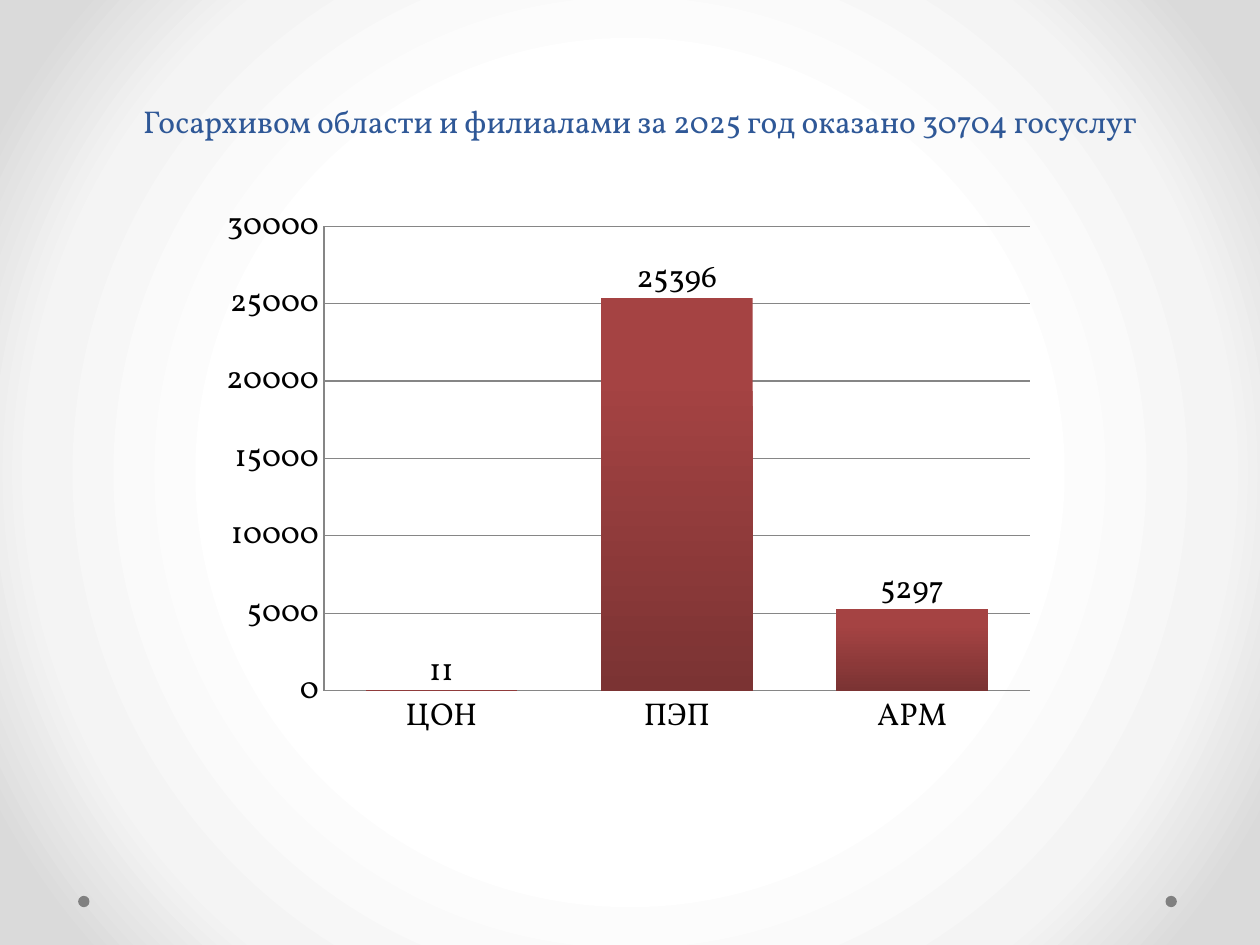
from pptx import Presentation
from pptx.chart.data import CategoryChartData
from pptx.dml.color import RGBColor
from pptx.enum.chart import XL_CHART_TYPE as ChartType
from pptx.enum.chart import XL_LABEL_POSITION as LabelPosition
from pptx.enum.chart import XL_TICK_MARK as TickMark
from pptx.enum.shapes import MSO_SHAPE as Shape
from pptx.enum.text import MSO_ANCHOR as Anchor
from pptx.enum.text import PP_ALIGN as Align
from pptx.oxml import parse_xml
from pptx.oxml.ns import nsdecls
from pptx.util import Inches, Pt

FONT = "Vollkorn"
COLORS = {
    "title": "2F5897", "dot": "808080", "grid": "868686", "text": "000000",
    "bar_top": "A54343", "bar_bottom": "7B3333",
}
BACKGROUND_STOPS = [(50, "FFFFFF"), (76, "F4F4F4"), (92, "DADADA")]
SERVICES = {"ЦОН": 11, "ПЭП": 25396, "АРМ": 5297}


def color(name):
    return RGBColor.from_string(COLORS[name])


def format_font(font, size=18, fill="text"):
    font.name = FONT
    font.size = Pt(size)
    font.bold = False
    font.color.rgb = color(fill)


def set_background(page):
    stops = "".join(
        f'<a:gs pos="{position * 1000}"><a:srgbClr val="{value}"/></a:gs>'
        for position, value in BACKGROUND_STOPS
    )
    page.element.cSld.insert(0, parse_xml(
        f'<p:bg {nsdecls("p", "a")}><p:bgPr><a:gradFill><a:gsLst>{stops}</a:gsLst>'
        '<a:path path="circle"><a:fillToRect l="50000" t="50000" r="50000" b="50000"/>'
        '</a:path></a:gradFill><a:effectLst/></p:bgPr></p:bg>'
    ))


def add_dot(page, left, top, size=0.09):
    dot = page.shapes.add_shape(
        Shape.OVAL, Inches(left), Inches(top), Inches(size), Inches(size))
    dot.shadow.inherit = False
    dot.fill.solid()
    dot.fill.fore_color.rgb = color("dot")
    dot.line.fill.background()


def add_text(page, text, left, top, width, height, **style):
    box = page.shapes.add_textbox(
        Inches(left), Inches(top), Inches(width), Inches(height))
    frame = box.text_frame
    frame.word_wrap = True
    frame.vertical_anchor = Anchor.BOTTOM
    para = frame.paragraphs[0]
    para.alignment = Align.CENTER
    span = para.add_run()
    span.text = text
    format_font(span.font, **style)


def manual_layout(content):
    return parse_xml(
        f'<c:layout {nsdecls("c")}><c:manualLayout>{content}</c:manualLayout></c:layout>')


def place_plot(chart, x, y, w, h):
    area = chart.plots[0]._element.getparent()
    for old in area.findall("{*}layout"):
        area.remove(old)
    sizes = "".join(
        f'<c:{key} val="{value}"/>' for key, value in zip("xywh", (x, y, w, h)))
    area.insert(0, manual_layout(
        '<c:layoutTarget val="inner"/><c:xMode val="edge"/><c:yMode val="edge"/>' + sizes))


def raise_label(point, shift):
    label = point.data_label
    label.position = LabelPosition.INSIDE_END
    label._dLbl.insert(1, manual_layout(f'<c:x val="0"/><c:y val="{-shift}"/>'))


def style_axis(axis):
    axis.major_tick_mark = axis.minor_tick_mark = TickMark.NONE
    axis.format.line.color.rgb = color("grid")
    axis.format.line.width = Pt(0.75)


def style_bars(series):
    fill = series.format.fill
    fill.gradient()
    fill.gradient_angle = 270
    for stop, name, position in zip(
            fill.gradient_stops, ("bar_top", "bar_bottom"), (0.2, 1)):
        stop.color.rgb = color(name)
        stop.position = position


def add_services_chart(page, left, top, width, height):
    data = CategoryChartData()
    data.categories = list(SERVICES)
    data.add_series("Series 1", list(SERVICES.values()))
    chart = page.shapes.add_chart(
        ChartType.COLUMN_STACKED, Inches(left), Inches(top),
        Inches(width), Inches(height), data).chart
    chart.has_legend = chart.has_title = False
    format_font(chart.font)
    place_plot(chart, 0.135, 0.06, 0.84, 0.83)
    style_axis(chart.category_axis)
    values = chart.value_axis
    style_axis(values)
    values.minimum_scale, values.maximum_scale, values.major_unit = 0, 30000, 5000
    values.has_major_gridlines = True
    values.major_gridlines.format.line.color.rgb = color("grid")
    values.major_gridlines.format.line.width = Pt(0.75)
    plot = chart.plots[0]
    plot.gap_width, plot.overlap, plot.vary_by_categories = 55, 100, False
    series = plot.series[0]
    style_bars(series)
    series.data_labels.show_value = True
    series.data_labels.position = LabelPosition.INSIDE_END
    for index in range(len(SERVICES)):
        raise_label(series.points[index], 0.08)


def main():
    """Build the slide on state archive services and save it."""
    deck = Presentation()
    deck.slide_width, deck.slide_height = Inches(10), Inches(7.5)
    page = deck.slides.add_slide(deck.slide_layouts[6])
    set_background(page)
    for left in (9.25, 0.62):
        add_dot(page, left, 7.11)
    add_text(page, "Госархивом области и филиалами за 2025 год оказано 30704 госуслуг",
             0.83, 0.21, 8.5, 0.95, size=18, fill="title")
    add_services_chart(page, 1.67, 1.53, 6.67, 4.44)
    deck.save("out.pptx")


if __name__ == "__main__":
    main()
